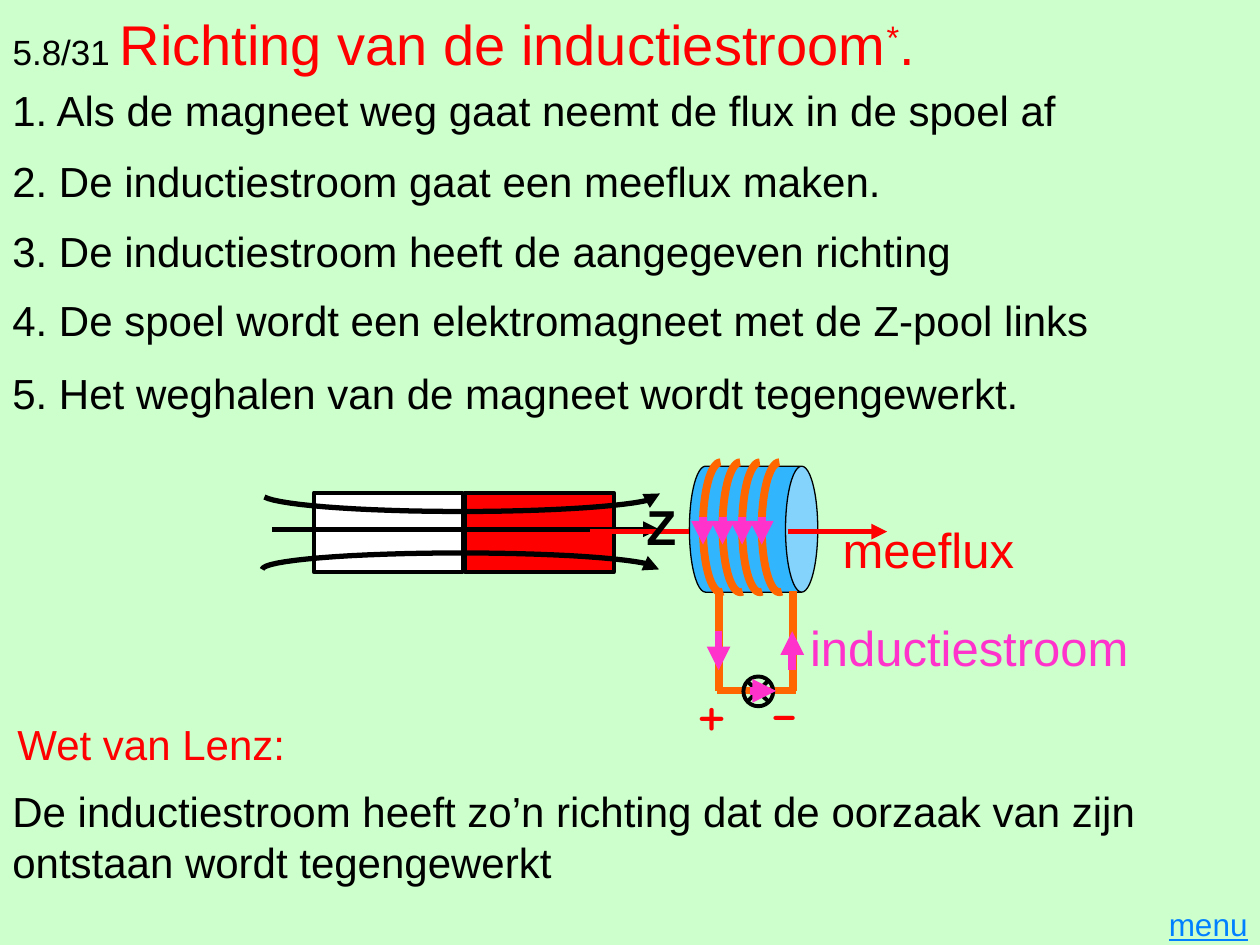
import math

from lxml import etree
from pptx import Presentation
from pptx.dml.color import RGBColor
from pptx.enum import shapes, text
from pptx.oxml import ns
from pptx.util import Pt

BLACK, RED, PINK, ORANGE = "000000", "FF0000", "FF33CC", "FF6600"

# Content: title spans, then text boxes as (text, left, top, width, height, format)
TITLE = [
    ("5.8/31 ", dict(size=20)),
    ("Richting van de inductiestroom", dict(size=32, color=RED)),
    ("*", dict(size=32, color=RED, raised=True)),
    (".", dict(size=32, color=RED)),
]
STEPS = [
    ("1. Als de magneet weg gaat neemt de flux in de spoel af", 44.6),
    ("2. De inductiestroom gaat een meeflux maken.", 85),
    ("3. De inductiestroom heeft de aangegeven richting", 124.6),
    ("4. De spoel wordt een elektromagneet met de Z-pool links", 164.2),
    ("5. Het weghalen van de magneet wordt tegengewerkt.", 205.9),
]
LAW = [
    ("Wet van Lenz:", 2.9, 406.8, 720, 36.7, dict(color=RED)),
    ("De inductiestroom heeft zo’n richting dat de oorzaak van zijn "
     "ontstaan wordt tegengewerkt", 0, 445, 720, 65.5, {}),
    ("menu", 660.2, 513.4, 59.8, 28.8,
     dict(size=18, color="0080FF", underline=True, align=text.PP_ALIGN.RIGHT)),
]
LABELS = [
    ("meeflux", 474.5, 293, 127.4, 41, dict(size=28, color=RED)),
    ("inductiestroom", 455.8, 349.2, 215.3, 41, dict(size=28, color=PINK)),
    ("Z", 362.2, 280.1, 54, 41, dict(size=28, bold=True)),
    ("+", 391, 377.3, 39.6, 55.4, dict(size=40, color=RED, font="Comic Neue")),
    ("-", 433.4, 376.6, 39.6, 55.4, dict(size=40, color=RED, font="Comic Neue")),
]

# Lines: x1, y1, x2, y2, colour, width, arrow at the end
CIRCUIT = [
    (411, 337.7, 411, 394.6, ORANGE, 4.5, False),
    (452.9, 337.7, 452.9, 394.6, ORANGE, 4.5, False),
    (409.7, 394.6, 455, 394.6, ORANGE, 4.5, False),
    (439.2, 388.8, 427, 401, BLACK, 2.25, False),
    (439.2, 401, 427, 389.2, BLACK, 2.25, False),
]
FLUX = [
    (450, 303.8, 506.9, 303.8, RED, 3, True),
    (337, 303.8, 393.8, 303.8, RED, 3, False),
]
CURRENT = [
    (410.6, 360.7, 410.6, 383, PINK, 4.5, True),
    (452.7, 383, 452.7, 360.7, PINK, 4.5, True),
    (428.4, 394.8, 443.5, 394.8, PINK, 4.5, True),
]
# Field arcs: centre x, centre y, radius x, radius y, start and end angle
FIELD_ARCS = [
    (263.5, 282.5, 113.8, 9.8, -3, 171),
    (263.2, 325.4, 113.4, 9.4, 0, -180),
]
TURNS, TURN_GAP, TURN_X, TURN_RADIUS = 4, 11.2, 411.8, 10.1

deck = Presentation()
deck.slide_width, deck.slide_height = Pt(720), Pt(540)
page = deck.slides.add_slide(deck.slide_layouts[5])


def rgb(value):
    return RGBColor.from_string(value)


def add_span(para, words, size=24, color=BLACK, font="Arial", bold=False,
             underline=False, raised=False):
    span = para.add_run()
    span.text = words
    span.font.size, span.font.name = Pt(size), font
    span.font.bold, span.font.underline = bold, underline
    span.font.color.rgb = rgb(color)
    if raised:
        span.font._element.set("baseline", "30000")


def add_text(words, left, top, width, height, align=text.PP_ALIGN.LEFT, **style):
    box = page.shapes.add_textbox(Pt(left), Pt(top), Pt(width), Pt(height))
    frame = box.text_frame
    frame.word_wrap = True
    frame.auto_size = text.MSO_AUTO_SIZE.SHAPE_TO_FIT_TEXT
    frame.vertical_anchor = text.MSO_ANCHOR.MIDDLE
    frame.paragraphs[0].alignment = align
    add_span(frame.paragraphs[0], words, **style)


def set_line(shape, color, width, arrow=None):
    """arrow is None, headEnd (at the start) or tailEnd (at the end)."""
    shape.line.color.rgb, shape.line.width = rgb(color), Pt(width)
    if arrow:
        outline = shape.element.spPr.find(ns.qn("a:ln"))
        etree.SubElement(outline, ns.qn("a:" + arrow), type="triangle")


def add_line(x1, y1, x2, y2, color, width, arrow):
    line = page.shapes.add_connector(
        shapes.MSO_CONNECTOR.STRAIGHT, Pt(x1), Pt(y1), Pt(x2), Pt(y2))
    set_line(line, color, width, "tailEnd" if arrow else None)
    etree.SubElement(line.element.spPr, ns.qn("a:effectLst"))


def add_shape(kind, left, top, width, height, fill, line_width, rotation=0):
    shape = page.shapes.add_shape(kind, Pt(left), Pt(top), Pt(width), Pt(height))
    shape.shadow.inherit = False
    shape.rotation = rotation
    if fill:
        shape.fill.solid()
        shape.fill.fore_color.rgb = rgb(fill)
    else:
        shape.fill.background()
    set_line(shape, BLACK, line_width)
    return shape


def add_arc(x, y, radius_x, radius_y, start, end, color, width, arrow=None, parts=32):
    angles = [math.radians(start + (end - start) * i / parts) for i in range(parts + 1)]
    points = [(Pt(x + radius_x * math.cos(a)), Pt(y + radius_y * math.sin(a)))
              for a in angles]
    builder = page.shapes.build_freeform(*points[0])
    builder.add_line_segments(points[1:], close=False)
    arc = builder.convert_to_shape()
    arc.shadow.inherit = False
    arc.fill.background()
    set_line(arc, color, width, arrow)


# Background and title
page.background.fill.solid()
page.background.fill.fore_color.rgb = rgb("CCFFCC")
title = page.shapes.title
title.left, title.top, title.width, title.height = Pt(0), Pt(0), Pt(720), Pt(49.7)
title.text_frame.auto_size = text.MSO_AUTO_SIZE.NONE
title.text_frame.vertical_anchor = text.MSO_ANCHOR.MIDDLE
title.text_frame.paragraphs[0].alignment = text.PP_ALIGN.LEFT
for words, style in TITLE:
    add_span(title.text_frame.paragraphs[0], words, **style)

# Coil, windings and lamp circuit
coil = add_shape(shapes.MSO_SHAPE.CAN, 394.6, 265.7, 72, 73.4, "31B6FD", 0.75, 90)
coil.adjustments[0] = 0.256
turn_centres = [TURN_X + i * TURN_GAP for i in range(TURNS)]
for x in turn_centres:
    add_arc(x, 301.3, TURN_RADIUS, 37.1, 82, 270, ORANGE, 4.5)
for line in CIRCUIT:
    add_line(*line)
add_shape(shapes.MSO_SHAPE.OVAL, 424.8, 386.6, 17, 17, None, 2.25, 45)

# Explanation
for words, top in STEPS:
    add_text(words, 0, top, 720, 36.7)
for *item, style in LAW:
    add_text(*item, **style)

# Bar magnet with its field
for left, fill in [(265.7, RED), (179.3, "FFFFFF")]:
    add_shape(shapes.MSO_SHAPE.RECTANGLE, left, 281.5, 85, 45.4, fill, 2.25, 180)
add_line(155.5, 302.4, 376.6, 302.4, BLACK, 3, True)
for arc in FIELD_ARCS:
    add_arc(*arc, BLACK, 3, "headEnd")

# Flux and current arrows
turn_arrows = [(x - TURN_RADIUS, 295.2, x - TURN_RADIUS, 311.2, PINK, 4.5, True)
               for x in turn_centres]
for line in FLUX + CURRENT + turn_arrows:
    add_line(*line)

# Labels
for *item, style in LABELS:
    add_text(*item, **style)

deck.save("out.pptx")
